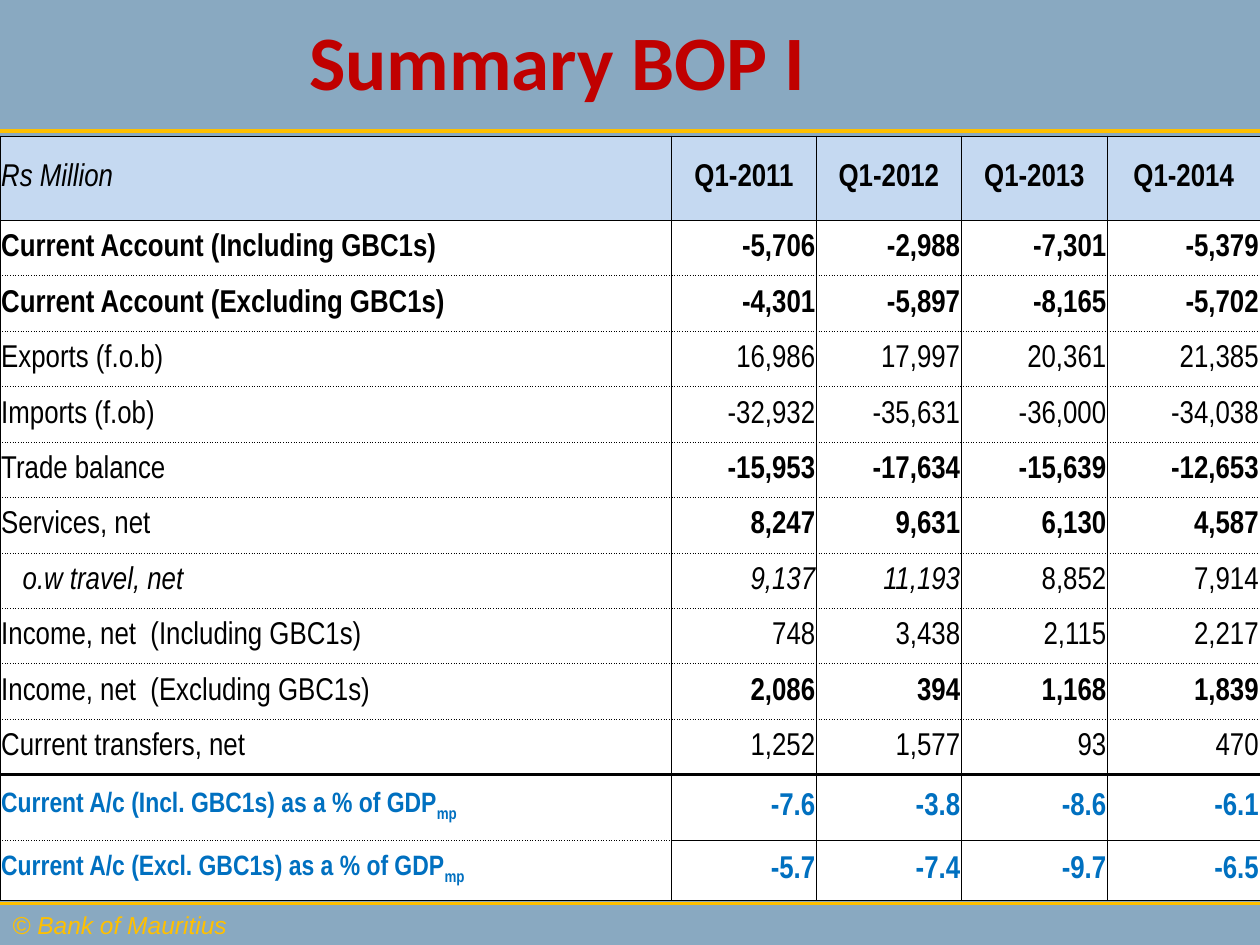
"""Build the Summary BOP I slide with its balance of payments table."""
from lxml import etree
from pptx import Presentation
from pptx.dml.color import RGBColor
from pptx.enum.shapes import MSO_CONNECTOR
from pptx.enum.text import MSO_ANCHOR, PP_ALIGN
from pptx.oxml.ns import qn
from pptx.util import Inches, Pt

LEFT, CENTER, RIGHT = PP_ALIGN.LEFT, PP_ALIGN.CENTER, PP_ALIGN.RIGHT
MIDDLE = MSO_ANCHOR.MIDDLE
STRAIGHT = MSO_CONNECTOR.STRAIGHT
COLORS = {"back": "89A9C1", "gold": "FFC000", "title": "C00000", "head": "C5D9F1",
          "white": "FFFFFF", "ink": "000000", "share": "0070C0"}
COLUMNS = [5.33, 1.15, 1.15, 1.16, 1.21]
HEIGHTS = [0.67] + [0.44] * 10 + [0.52, 0.48]
SOLID, DOTTED, THICK = (0.5, "solid"), (0.5, "sysDot"), (2, "solid")
INDENTED = "o.w travel, net"
SUBSCRIPT = "mp"
STYLES = {"b": {"bold": True, "italic": False},
          "i": {"bold": False, "italic": True},
          "n": {"bold": False, "italic": False}}
ROWS = [
    ("ibbbb", "Rs Million", "Q1-2011", "Q1-2012", "Q1-2013", "Q1-2014"),
    ("bbbbb", "Current Account (Including GBC1s)", "-5,706", "-2,988", "-7,301", "-5,379"),
    ("bbbbb", "Current Account (Excluding GBC1s)", "-4,301", "-5,897", "-8,165", "-5,702"),
    ("nnnnn", "Exports (f.o.b)", "16,986", "17,997", "20,361", "21,385"),
    ("nnnnn", "Imports (f.ob)", "-32,932", "-35,631", "-36,000", "-34,038"),
    ("nbbbb", "Trade balance", "-15,953", "-17,634", "-15,639", "-12,653"),
    ("nbbbb", "Services, net", "8,247", "9,631", "6,130", "4,587"),
    ("iiinn", INDENTED, "9,137", "11,193", "8,852", "7,914"),
    ("nnnnn", "Income, net  (Including GBC1s)", "748", "3,438", "2,115", "2,217"),
    ("nbbbb", "Income, net  (Excluding GBC1s)", "2,086", "394", "1,168", "1,839"),
    ("nnnnn", "Current transfers, net", "1,252", "1,577", "93", "470"),
    ("bbbbb", "Current A/c (Incl. GBC1s) as a % of GDP", "-7.6", "-3.8", "-8.6", "-6.1"),
    ("bbbbb", "Current A/c (Excl. GBC1s) as a % of GDP", "-5.7", "-7.4", "-9.7", "-6.5"),
]
FIRST_SHARE = 11


def rule_below(row, col):
    """Return the width and dash of the rule under a row (-1 is the top edge)."""
    if row == FIRST_SHARE - 1:
        return THICK
    if 0 < row < FIRST_SHARE or (row == FIRST_SHARE and col == 0):
        return DOTTED
    return SOLID


class Deck:
    """Holds the presentation style and the current slide."""

    def __init__(self, prs):
        self.s = prs.slides.add_slide(prs.slide_layouts[5])
        fill = self.s.background.fill
        fill.solid()
        fill.fore_color.rgb = self.color("back")

    def color(self, name):
        """Return a named colour."""
        return RGBColor.from_string(COLORS[name])

    def add_text(self, p, text, color, **font):
        """Add a formatted run to a paragraph."""
        r = p.add_run()
        r.text = text
        for name, value in font.items():
            setattr(r.font, name, value)
        r.font.color.rgb = self.color(color)
        return r

    def title(self, text, *box):
        """Move and fill the title placeholder."""
        sp = self.s.shapes.title
        sp.left, sp.top, sp.width, sp.height = map(Inches, box)
        tf = sp.text_frame
        tf.vertical_anchor = MIDDLE
        p = tf.paragraphs[0]
        p.alignment, p.line_spacing = CENTER, 0.9
        self.add_text(p, text, "title", name="Calibri", size=Pt(44), bold=True)

    def rule(self, y):
        """Draw a gold rule across the slide."""
        sp = self.s.shapes.add_connector(STRAIGHT, 0, Inches(y), Inches(10), Inches(y))
        sp.line.color.rgb = self.color("gold")
        sp.line.width = Pt(1.75)
        etree.SubElement(sp._element.spPr, qn("a:effectLst"))

    def footer(self, text, *box):
        """Add the copyright line."""
        tf = self.s.shapes.add_textbox(*map(Inches, box)).text_frame
        tf.word_wrap = True
        self.add_text(tf.paragraphs[0], text, "gold", name="Arial", size=Pt(14), italic=True)

    def border(self, cell, side, width, dash):
        """Draw one side of a cell."""
        ln = etree.SubElement(cell._tc.get_or_add_tcPr(), qn(f"a:ln{side}"), w=str(Pt(width)))
        fill = etree.SubElement(ln, qn("a:solidFill"))
        etree.SubElement(fill, qn("a:srgbClr"), val=COLORS["ink"])
        etree.SubElement(ln, qn("a:prstDash"), val=dash)

    def cell(self, cell, row, col, text, code):
        """Format and fill one table cell."""
        share, label = row >= FIRST_SHARE, col == 0
        cell.vertical_anchor = MIDDLE
        cell.margin_left = Inches(0.18 if text == INDENTED else 0.01)
        cell.margin_right = cell.margin_top = Inches(0.01)
        cell.margin_bottom = 0
        sides = {"L": SOLID, "R": SOLID, "T": rule_below(row - 1, col), "B": rule_below(row, col)}
        for side, style in sides.items():
            self.border(cell, side, *style)
        cell.fill.solid()
        cell.fill.fore_color.rgb = self.color("white" if row else "head")
        p = cell.text_frame.paragraphs[0]
        p.alignment = LEFT if label else RIGHT if row else CENTER
        font = {"name": "Arial Narrow", "size": Pt(16 if share and label else 18), **STYLES[code]}
        color = "share" if share else "ink"
        self.add_text(p, text, color, **font)
        if share and label:
            r = self.add_text(p, SUBSCRIPT, color, **font)
            r._r.get_or_add_rPr().set("baseline", "-25000")

    def table(self, rows, x, y):
        """Add the table of figures."""
        size = Inches(sum(COLUMNS)), Inches(sum(HEIGHTS))
        table = self.s.shapes.add_table(len(rows), len(COLUMNS), Inches(x), Inches(y), *size).table
        for column, width in zip(table.columns, COLUMNS):
            column.width = Inches(width)
        for i, (codes, *texts) in enumerate(rows):
            table.rows[i].height = Inches(HEIGHTS[i])
            for j, (text, code) in enumerate(zip(texts, codes)):
                self.cell(table.cell(i, j), i, j, text, code)


def main():
    """Build and save the slide."""
    prs = Presentation()
    prs.slide_width, prs.slide_height = Inches(10), Inches(7.5)
    deck = Deck(prs)
    for y in (1.04, 7.17):
        deck.rule(y)
    deck.footer("© Bank of Mauritius", 0, 7.17, 3.58, 0.34)
    deck.title("Summary BOP I ", 0.33, 0, 8.33, 1.04)
    deck.table(ROWS, 0, 1.08)
    prs.save("out.pptx")


if __name__ == "__main__":
    main()
